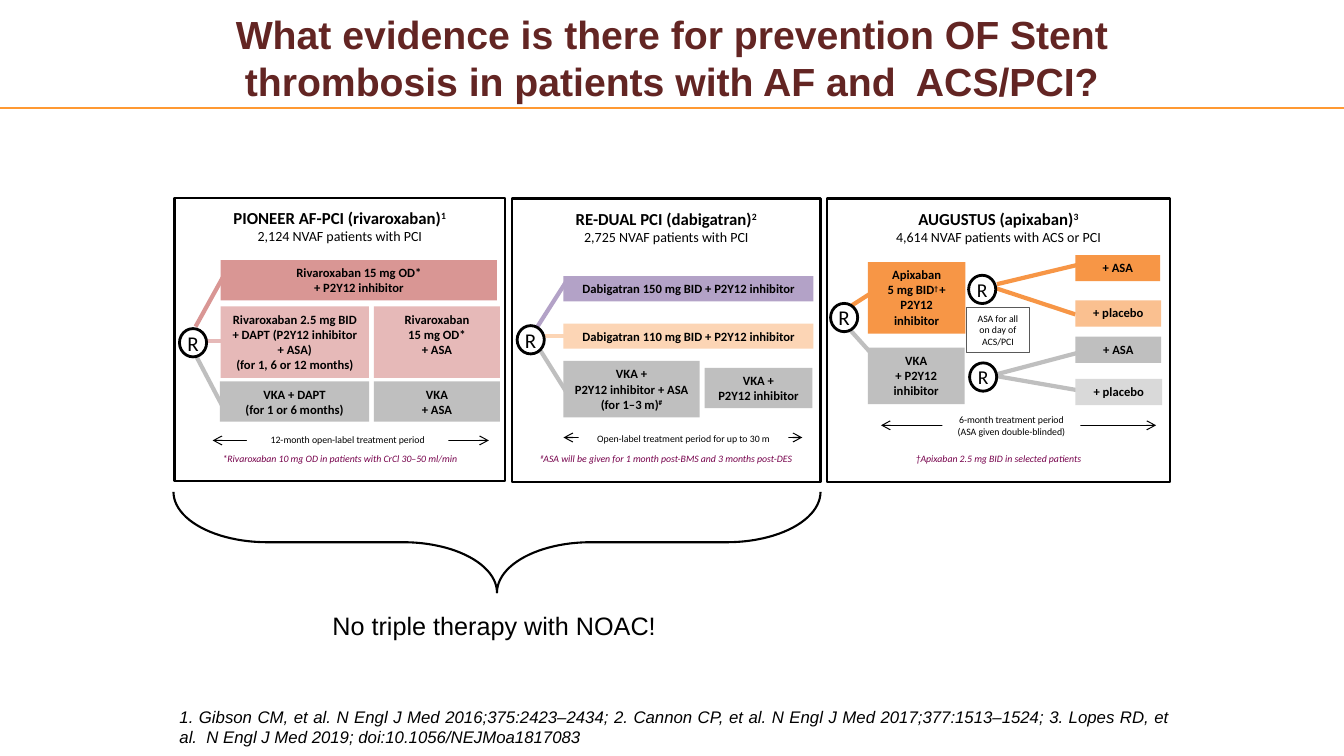
from lxml import etree
from pptx import Presentation
from pptx import util as u
from pptx.dml import color as dml
from pptx.enum import shapes as kinds, text as txt
from pptx.oxml import ns

COLORS = {
    "black": "000000", "white": "FFFFFF", "maroon": "632523", "rule": "FF9933",
    "note": "76004B", "rose": "D99694", "pale rose": "E6B9B8", "grey": "BFBFBF",
    "pale grey": "D9D9D9", "orange": "F79646", "light orange": "FAC090",
    "peach": "FCD5B5", "violet": "B3A2C7", "frame": "595959",
}
CENTER, JUSTIFY, LEFT = (txt.PP_ALIGN.CENTER, txt.PP_ALIGN.JUSTIFY,
                         txt.PP_ALIGN.LEFT)
TOP, MIDDLE = txt.MSO_ANCHOR.TOP, txt.MSO_ANCHOR.MIDDLE

# Font formats by role
ARM = {"name": "Calibri", "size": u.Pt(9), "bold": True}
SMALL = {"name": "Calibri", "size": u.Pt(7)}
NOTE = {**SMALL, "italic": True}
TRIAL = {"name": "Calibri", "size": u.Pt(12), "bold": True}
PATIENTS = {"name": "Calibri", "size": u.Pt(10)}
TITLE = {"name": "Arial", "size": u.Pt(28), "bold": True}
MESSAGE = {"name": "Arial", "size": u.Pt(18)}
REFERENCE = {"name": "Arial", "size": u.Pt(12), "italic": True}

# Panels: left, top, width, trial name, patients, footnote
PANEL_HEIGHT = 202.3
PANELS = [
    (124.6, 141.1, 236.2, "PIONEER AF-PCI (rivaroxaban)^1^",
     "2,124 NVAF patients with PCI",
     "*Rivaroxaban 10 mg OD in patients with CrCl 30–50 ml/min"),
    (365.8, 141.8, 220.3, "RE-DUAL PCI (dabigatran)^2^",
     "2,725 NVAF patients with PCI",
     "^#^ASA will be given for 1 month post-BMS and 3 months post-DES"),
    (590.4, 141.8, 245.5, "AUGUSTUS (apixaban)^3^",
     "4,614 NVAF patients with ACS or PCI",
     "†Apixaban 2.5 mg BID in selected patients"),
]
# Branches: start x, start y, end x, end y, colour
BRANCHES = [
    (162, 193, 139.7, 233.3, "rose"),
    (161.3, 243.4, 146.9, 243.4, "pale rose"),
    (162.7, 297.4, 140.4, 254.9, "grey"),
    (404.6, 200.9, 381.6, 236.9, "violet"),
    (416.9, 239.8, 389.5, 239.8, "peach"),
    (404.6, 280.1, 385.2, 249.1, "grey"),
    (608.4, 218.2, 634.3, 201.6, "orange"),
    (607.7, 236.2, 632.9, 264.2, "grey"),
    (712.1, 203, 769, 189.4, "orange"),
    (711.4, 205.9, 768.2, 224.6, "orange"),
    (712.8, 267.1, 778.3, 249.8, "grey"),
    (711.4, 268.6, 769, 278.6, "grey"),
]
# Treatment arms: left, top, width, height, colour, anchor, lines
ARMS = [
    (157.7, 185.8, 197.3, 28.8, "rose", TOP,
     ["Rivaroxaban 15 mg OD*", "+ P2Y12 inhibitor"]),
    (157.7, 218.9, 105.8, 51.1, "pale rose", TOP,
     ["Rivaroxaban 2.5 mg BID + DAPT (P2Y12 inhibitor + ASA)",
      "(for 1, 6 or 12 months)"]),
    (267.1, 218.9, 90, 51.1, "pale rose", TOP,
     ["Rivaroxaban", "15 mg OD*", "+ ASA"]),
    (157, 272.5, 106.6, 28.8, "grey", TOP, ["VKA + DAPT", "(for 1 or 6 months)"]),
    (267.1, 272.5, 90, 28.8, "grey", TOP, ["VKA", "+ ASA"]),
    (402.5, 197.3, 178.6, 18, "violet", MIDDLE,
     ["Dabigatran 150 mg BID + P2Y12 inhibitor"]),
    (402.5, 231.1, 178.6, 18, "peach", MIDDLE,
     ["Dabigatran 110 mg BID + P2Y12 inhibitor"]),
    (402.5, 257.8, 97.2, 40.3, "grey", MIDDLE,
     ["VKA +", "P2Y12 inhibitor + ASA (for 1–3 m)^#^"]),
    (503.3, 262.8, 77, 28.8, "grey", MIDDLE, ["VKA +", "P2Y12 inhibitor"]),
    (619.9, 187.2, 69.8, 51.1, "orange", TOP,
     ["Apixaban", "5 mg BID^† ^+ P2Y12 inhibitor"]),
    (619.9, 248.4, 69.1, 40.3, "grey", TOP, ["VKA", "+ P2Y12 inhibitor"]),
    (768.2, 182.2, 60.5, 18.7, "orange", TOP, ["+ ASA"]),
    (768.2, 214.6, 61.2, 18.7, "light orange", TOP, ["+ placebo"]),
    (768.2, 240.5, 61.2, 18.7, "grey", MIDDLE, ["+ ASA"]),
    (768.2, 270.7, 61.9, 18.7, "pale grey", TOP, ["+ placebo"]),
]
# Randomisation points: left, top, letter size
RANDOMISATIONS = [(128.2, 234.7, 15), (369.4, 232.6, 15), (593.3, 216.7, 15),
                  (691.9, 196.6, 14), (692.6, 259.2, 14)]
# Treatment periods: arrow left, arrow right, arrow y, label box, lines
PERIODS = [
    (151.9, 349.2, 314.6, (176.4, 306, 144, 15.8),
     ["12-month open-label treatment period"]),
    (402.5, 573.1, 312.5, (413.3, 305.3, 149.8, 15.8),
     ["Open-label treatment period for up to 30 m"]),
    (629.3, 825.8, 303.8, (673.2, 292.3, 98.6, 25.2),
     ["6-month treatment period", "(ASA given double-blinded)"]),
]


def rgb(name):
    return dml.RGBColor.from_string(COLORS[name])


def write(shape, lines, fonts, color="black", align=CENTER, anchor=TOP,
          insets=(7.2, 3.6), wrap=True):
    """Fill a shape with lines; text between ^ marks is superscript."""
    frame = shape.text_frame
    across, down = (u.Pt(inset) for inset in insets)
    layout = {"word_wrap": wrap, "auto_size": txt.MSO_AUTO_SIZE.NONE,
              "vertical_anchor": anchor, "margin_left": across,
              "margin_right": across, "margin_top": down, "margin_bottom": down}
    for name, value in layout.items():
        setattr(frame, name, value)
    for index, line in enumerate(lines):
        paragraph = frame.add_paragraph() if index else frame.paragraphs[0]
        paragraph.alignment = align
        font_format = fonts[index] if isinstance(fonts, list) else fonts
        for part, words in enumerate(line.split("^")):
            if not words:
                continue
            run = paragraph.add_run()
            run.text = words
            for name, value in font_format.items():
                setattr(run.font, name, value)
            run.font.color.rgb = rgb(color)
            if part % 2:
                run.font._element.set("baseline", "30000")


def add_text(slide, box, lines, fonts, **options):
    shape = slide.shapes.add_textbox(*map(u.Pt, box))
    write(shape, lines, fonts, **options)


def add_shape(slide, kind, box, fill=None, line=None, width=1.5):
    shape = slide.shapes.add_shape(kind, *map(u.Pt, box))
    shape.shadow.inherit = False
    if fill:
        shape.fill.solid()
        shape.fill.fore_color.rgb = rgb(fill)
    else:
        shape.fill.background()
    if line:
        shape.line.color.rgb = rgb(line)
        shape.line.width = u.Pt(width)
    else:
        shape.line.fill.background()
    return shape


def add_line(slide, ends, color, width, arrows=False):
    line = slide.shapes.add_connector(kinds.MSO_CONNECTOR.STRAIGHT,
                                      *map(u.Pt, ends))
    line.line.color.rgb = rgb(color)
    line.line.width = u.Pt(width)
    if arrows:
        for end in ("a:headEnd", "a:tailEnd"):
            etree.SubElement(line.line._ln, ns.qn(end), type="arrow")
    etree.SubElement(line._element.spPr, ns.qn("a:effectLst"))


def add_panel(slide, left, top, width, trial, patients, note):
    add_shape(slide, kinds.MSO_SHAPE.RECTANGLE,
              (left, top, width, PANEL_HEIGHT), line="black")
    add_text(slide, (left, top + 4.3, width, 32.4), [trial, patients],
             [TRIAL, PATIENTS], insets=(5, 2.9))
    add_text(slide, (left, 320.4, width, 13.7), [note], NOTE, color="note",
             insets=(5, 2.9))


def add_period(slide, left, right, y, label, lines):
    add_line(slide, (left, y, right, y), "black", 0.75, arrows=True)
    shape = add_shape(slide, kinds.MSO_SHAPE.RECTANGLE, label, fill="white")
    write(shape, lines, SMALL)


def add_randomisation(slide, left, top, size):
    shape = add_shape(slide, kinds.MSO_SHAPE.OVAL, (left, top, 19.4, 20.2),
                      fill="white", line="black", width=2)
    write(shape, ["R"], {"name": "Calibri", "size": u.Pt(size)},
          anchor=MIDDLE, insets=(0, 0), wrap=False)


def main():
    presentation = Presentation()
    presentation.slide_width, presentation.slide_height = u.Pt(960), u.Pt(540)
    slide = presentation.slides.add_slide(presentation.slide_layouts[5])

    # Title and its rule
    title = slide.shapes.title
    for name, value in zip(("left", "top", "width", "height"),
                           (136.8, -0.7, 686.2, 82.8)):
        setattr(title, name, u.Pt(value))
    write(title, ["What evidence is there for prevention OF Stent thrombosis "
                  "in patients with AF and  ACS/PCI?"],
          TITLE, color="maroon", anchor=MIDDLE, insets=(0, 0))
    add_line(slide, (0, 77, 960, 77), "rule", 1.5)

    # Trial designs
    for panel in PANELS:
        add_panel(slide, *panel)
    for *ends, color in BRANCHES:
        add_line(slide, ends, color, 3)
    for *box, color, anchor, lines in ARMS:
        shape = add_shape(slide, kinds.MSO_SHAPE.RECTANGLE, box, fill=color)
        write(shape, lines, ARM, anchor=anchor)
    for period in PERIODS:
        add_period(slide, *period)
    for point in RANDOMISATIONS:
        add_randomisation(slide, *point)
    aspirin = add_shape(slide, kinds.MSO_SHAPE.RECTANGLE,
                        (690.5, 219.6, 44.6, 32.4), line="frame", width=0.75)
    write(aspirin, ["ASA for all", "on day of ACS/PCI"], SMALL)

    # Brace with the message
    brace = add_shape(slide, kinds.MSO_SHAPE.LEFT_BRACE,
                      (319, 156.2, 72, 462.2), line="black")
    brace.rotation = 270
    brace.adjustments[0] = 0.93
    add_text(slide, (230.4, 432.7, 249.1, 28.8),
             ["No triple therapy with NOAC!"], MESSAGE, align=LEFT, wrap=False)

    # References
    add_text(slide, (128.2, 504.7, 707.8, 32.4),
             ["1. Gibson CM, et al. N Engl J Med 2016;375:2423–2434; "
              "2. Cannon CP, et al. N Engl J Med 2017;377:1513–1524; "
              "3. Lopes RD, et al.  N Engl J Med 2019; doi:10.1056/NEJMoa1817083"],
             REFERENCE, align=JUSTIFY, insets=(0, 0))

    presentation.save("out.pptx")


if __name__ == "__main__":
    main()
